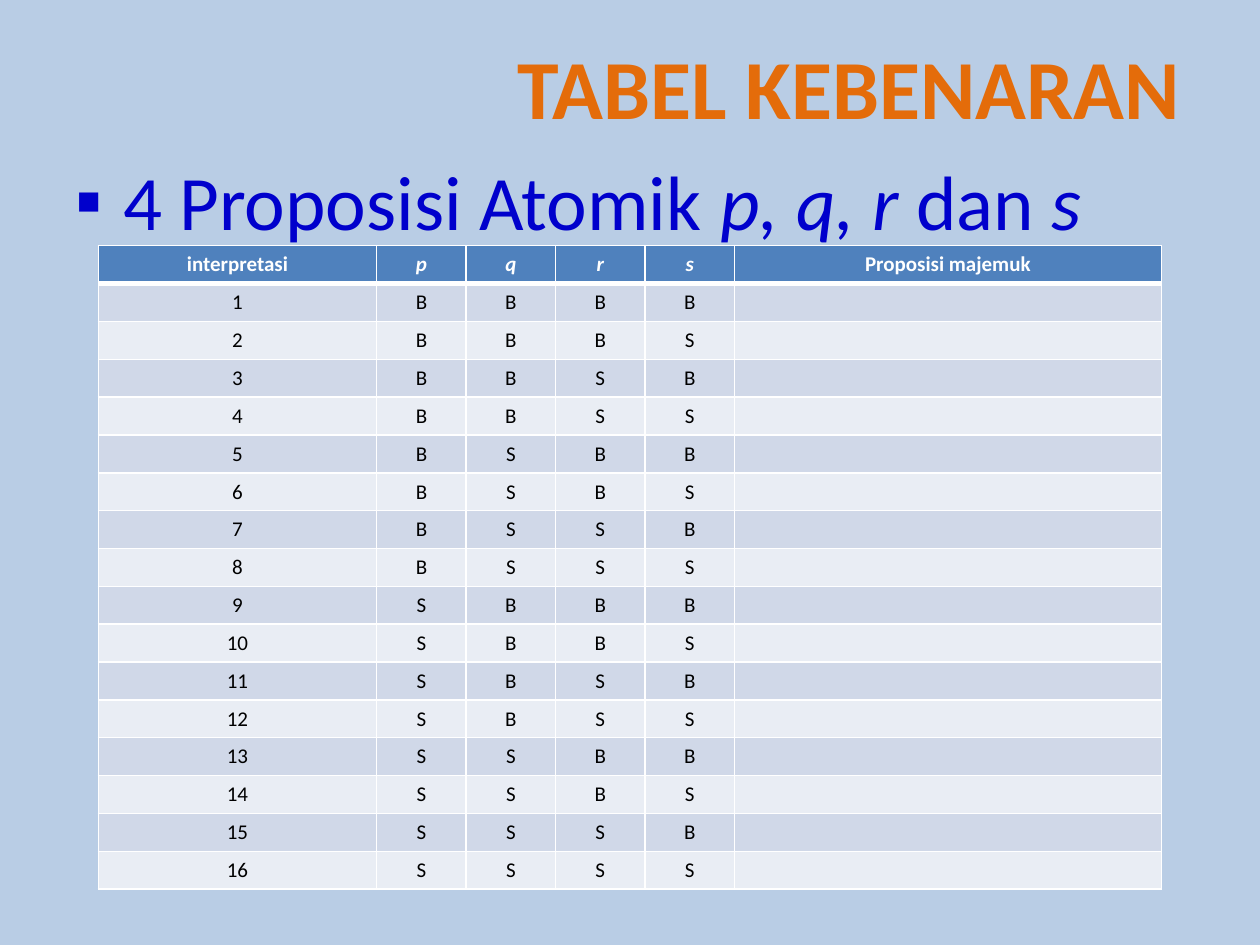
from itertools import product

from lxml.etree import SubElement
from pptx import Presentation
from pptx.dml.color import RGBColor as RGB
from pptx.enum.text import MSO_ANCHOR as Anchor, MSO_AUTO_SIZE as AutoSize, PP_ALIGN as Align
from pptx.oxml.ns import qn
from pptx.util import Inches, Pt

TITLE = "TABEL KEBENARAN"
STATEMENT = [("4 Proposisi Atomik ", False), ("p, q, r ", True), ("dan ", False), ("s", True)]
VARIABLES = ["p", "q", "r", "s"]
HEADER = ["interpretasi", *VARIABLES, "Proposisi majemuk"]
TRUTH_ROWS = [
    [str(number), *values, ""]
    for number, values in enumerate(product("BS", repeat=len(VARIABLES)), 1)
]

THEME = {
    "font": "Calibri",
    "background": "B9CDE5",
    "title": "E46C0A",
    "statement": "0000CC",
    "header": "4F81BD",
    "header_text": "FFFFFF",
    "bands": ["D0D8E8", "E9EDF4"],
    "cell_text": "000000",
    "border": "FFFFFF",
    "title_size": 48,
    "statement_size": 44,
    "table_size": 12,
}
WIDTH, HEIGHT = 10, 7.5
MARGIN = 0.05 * WIDTH
TABLE_LEFT, TABLE_TOP, ROW_HEIGHT = 0.78, 1.95, 0.3
COLUMN_WIDTHS = [2.21, *[0.71] * len(VARIABLES), 3.39]


def write(frame, runs, size, color, bold=False, align=Align.LEFT):
    paragraph = frame.paragraphs[0]
    paragraph.alignment = align
    for text, italic in runs:
        if text:
            run = paragraph.add_run()
            run.text = text
            font = run.font
            font.name, font.size = THEME["font"], Pt(size)
            font.bold, font.italic = bold, italic
            font.color.rgb = RGB.from_string(color)
        else:
            SubElement(paragraph._p, qn("a:endParaRPr"), sz=str(size * 100))
    return paragraph


def place(shape, left, top, width, height):
    shape.left, shape.top = Inches(left), Inches(top)
    shape.width, shape.height = Inches(width), Inches(height)


def add_bullet(paragraph, character, indent):
    properties = paragraph._p.get_or_add_pPr()
    properties.set("marL", str(Inches(indent)))
    properties.set("indent", str(-Inches(indent)))
    SubElement(properties, qn("a:buFont"), typeface="Arial")
    SubElement(properties, qn("a:buChar"), char=character)


def add_borders(cell, **widths):
    properties = cell._tc.get_or_add_tcPr()
    for side in "LRTB":
        line = SubElement(properties, qn(f"a:ln{side}"), w=str(Pt(widths.get(side, 1))))
        fill = SubElement(line, qn("a:solidFill"))
        SubElement(fill, qn("a:srgbClr"), val=THEME["border"])


def add_truth_table(slide):
    rows = [HEADER, *TRUTH_ROWS]
    table = slide.shapes.add_table(
        len(rows), len(HEADER), Inches(TABLE_LEFT), Inches(TABLE_TOP),
        Inches(sum(COLUMN_WIDTHS)), Inches(ROW_HEIGHT * len(rows)),
    ).table
    for column, width in zip(table.columns, COLUMN_WIDTHS):
        column.width = Inches(width)
    for row_index, values in enumerate(rows):
        table.rows[row_index].height = Inches(ROW_HEIGHT)
        is_header = row_index == 0
        fill = THEME["header"] if is_header else THEME["bands"][(row_index - 1) % 2]
        color = THEME["header_text"] if is_header else THEME["cell_text"]
        borders = {0: {"B": 3}, 1: {"T": 3}}.get(row_index, {})
        for column_index, text in enumerate(values):
            cell = table.cell(row_index, column_index)
            add_borders(cell, **borders)
            cell.fill.solid()
            cell.fill.fore_color.rgb = RGB.from_string(fill)
            write(cell.text_frame, [(text, text in VARIABLES)], THEME["table_size"], color,
                  bold=is_header, align=Align.CENTER)


def main():
    presentation = Presentation()
    presentation.slide_width, presentation.slide_height = Inches(WIDTH), Inches(HEIGHT)
    slide = presentation.slides.add_slide(presentation.slide_layouts[5])
    slide.background.fill.solid()
    slide.background.fill.fore_color.rgb = RGB.from_string(THEME["background"])

    title = slide.shapes.title
    place(title, 3.98, 0.23, WIDTH - MARGIN - 3.98, 0.91)
    title.text_frame.word_wrap = False
    title.text_frame.auto_size = AutoSize.SHAPE_TO_FIT_TEXT
    title.text_frame.vertical_anchor = Anchor.TOP
    write(title.text_frame, [(TITLE, False)], THEME["title_size"], THEME["title"],
          bold=True, align=Align.CENTER)

    statement = slide.shapes.add_textbox(0, 0, 0, 0)
    place(statement, MARGIN, 1.17, WIDTH - 2 * MARGIN, 5.2)
    statement.text_frame.word_wrap = True
    paragraph = write(statement.text_frame, STATEMENT, THEME["statement_size"], THEME["statement"])
    paragraph.space_before = Pt(0.2 * THEME["statement_size"])
    add_bullet(paragraph, "▪", 0.38)

    add_truth_table(slide)
    presentation.save("out.pptx")


if __name__ == "__main__":
    main()
